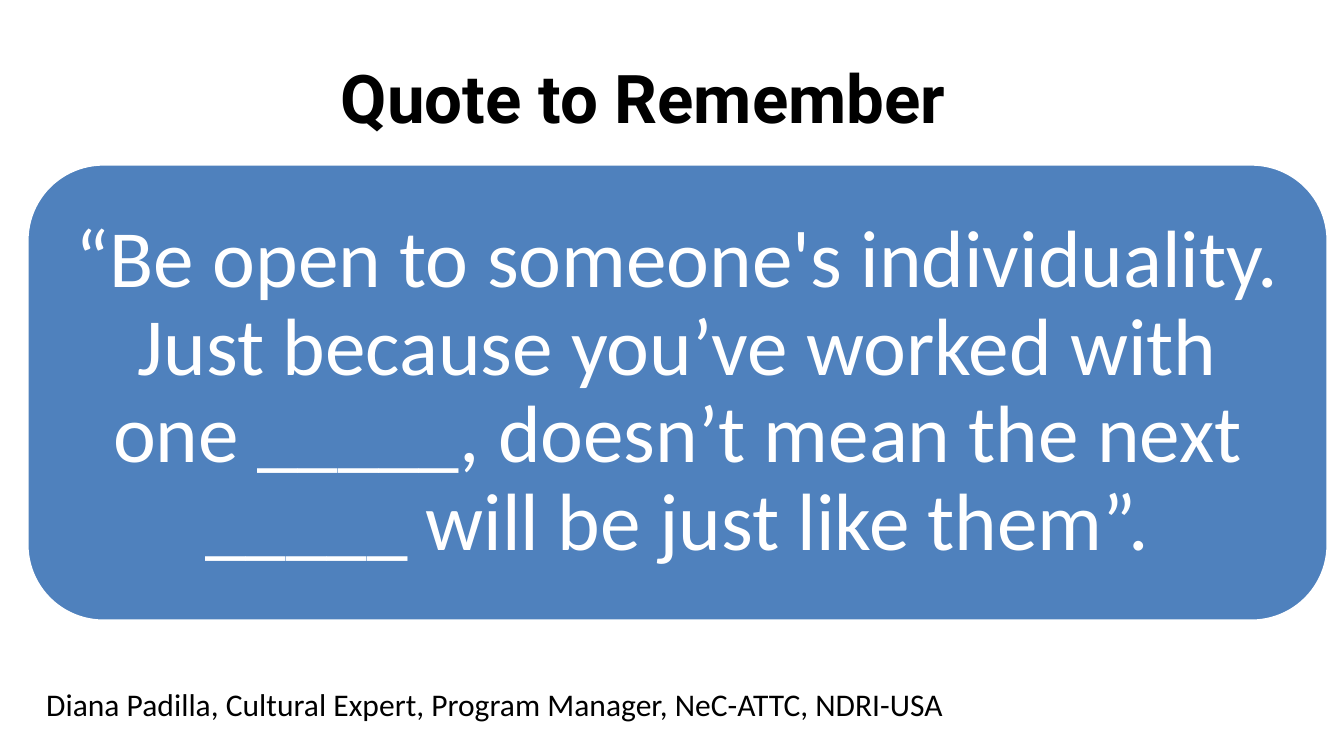
"""Build a slide with a title, a quote in a rounded panel and its attribution."""
import pptx
import pptx.util
import pptx.dml.color
import pptx.enum.shapes
import pptx.enum.text

Inches = pptx.util.Inches
Align = pptx.enum.text.PP_ALIGN
Anchor = pptx.enum.text.MSO_ANCHOR

TITLE = "Quote to Remember"
QUOTE = (
    "“Be open to someone's individuality. Just because you’ve worked with "
    "one _____, doesn’t mean the next _____ will be just like them”."
)
SPEAKER = "Diana Padilla, Cultural Expert, Program Manager, NeC-ATTC, NDRI-USA"

TITLE_AREA = (0, 0.25, 12.76, 1.42)
QUOTE_AREA = (0.27, 1.63, 12.9, 4.53)
SPEAKER_AREA = (0.36, 6.72, 11.76, 0.5)


def color(value):
    return pptx.dml.color.RGBColor.from_string(value)


def write(shape, text, font, size, ink, align, anchor, bold=False):
    frame = shape.text_frame
    frame.text = text
    frame.word_wrap = True
    frame.vertical_anchor = anchor
    para = frame.paragraphs[0]
    para.alignment = align
    span = para.runs[0]
    span.font.name = font
    span.font.size = pptx.util.Pt(size)
    span.font.bold = bold
    span.font.color.rgb = color(ink)
    return frame


def main():
    deck = pptx.Presentation()
    deck.slide_width, deck.slide_height = Inches(13.33), Inches(7.5)
    page = deck.slides.add_slide(deck.slide_layouts[6])

    title = page.shapes.add_textbox(*map(Inches, TITLE_AREA))
    write(title, TITLE, "Roboto", 48, "000000", Align.CENTER, Anchor.MIDDLE, bold=True)

    panel = page.shapes.add_shape(
        pptx.enum.shapes.MSO_SHAPE.ROUNDED_RECTANGLE, *map(Inches, QUOTE_AREA)
    )
    panel.shadow.inherit = False
    panel.fill.solid()
    panel.fill.fore_color.rgb = color("4F81BD")
    panel.line.color.rgb = color("FFFFFF")
    panel.line.width = pptx.util.Pt(2)
    frame = write(panel, QUOTE, "Calibri", 58, "FFFFFF", Align.CENTER, Anchor.MIDDLE)
    frame.margin_left = frame.margin_right = Inches(0.24)
    frame.margin_top = frame.margin_bottom = Inches(0.24)
    frame.paragraphs[0].line_spacing = 0.9

    speaker = page.shapes.add_textbox(*map(Inches, SPEAKER_AREA))
    write(speaker, SPEAKER, "Calibri", 22.5, "000000", Align.LEFT, Anchor.BOTTOM)

    deck.save("out.pptx")


if __name__ == "__main__":
    main()
